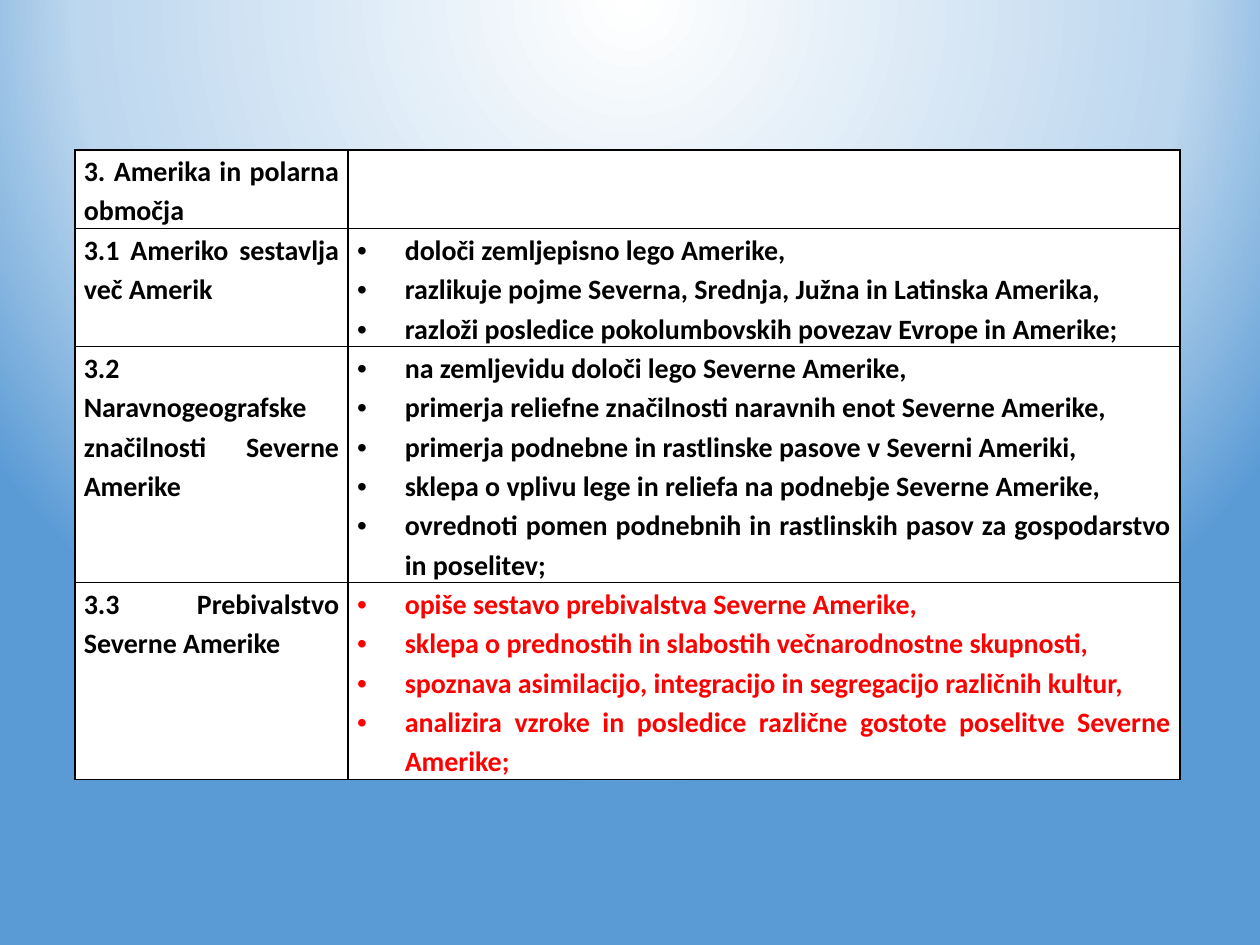
from lxml.etree import SubElement
from pptx import Presentation
from pptx.dml.color import RGBColor
from pptx.enum.text import PP_ALIGN as Align
from pptx.oxml import parse_xml
from pptx.oxml.ns import nsdecls, qn
from pptx.util import Cm, Pt

BLACK, WHITE, RED = "000000", "FFFFFF", "FF0000"
LINE_HEIGHT = 0.79
BACKGROUND_STOPS = [(0, WHITE), (70, "BDD7EE"), (100, "5B9BD5")]

# topic, goals, colour of the goals, number of text lines in the row
TOPICS = [
    ("3. Amerika in polarna območja", [], BLACK, 2),
    ("3.1 Ameriko sestavlja več Amerik", [
        "določi zemljepisno lego Amerike,",
        "razlikuje pojme Severna, Srednja, Južna in Latinska Amerika,",
        "razloži posledice pokolumbovskih povezav Evrope in Amerike;",
    ], BLACK, 3),
    ("3.2 Naravnogeografske značilnosti Severne Amerike", [
        "na zemljevidu določi lego Severne Amerike,",
        "primerja reliefne značilnosti naravnih enot Severne Amerike,",
        "primerja podnebne in rastlinske pasove v Severni Ameriki,",
        "sklepa o vplivu lege in reliefa na podnebje Severne Amerike,",
        "ovrednoti pomen podnebnih in rastlinskih pasov za gospodarstvo in poselitev;",
    ], BLACK, 6),
    ("3.3 Prebivalstvo Severne Amerike", [
        "opiše sestavo prebivalstva Severne Amerike,",
        "sklepa o prednostih in slabostih večnarodnostne skupnosti,",
        "spoznava asimilacijo, integracijo in segregacijo različnih kultur,",
        "analizira vzroke in posledice različne gostote poselitve Severne Amerike;",
    ], RED, 5),
]


def rgb(value):
    return RGBColor.from_string(value)


def set_background(slide, stops):
    """Fill the background with a circular gradient centred above the slide."""
    slide.background.fill.solid()
    solid = slide.element.find(".//" + qn("p:bgPr") + "/" + qn("a:solidFill"))
    stop_xml = "".join(
        f'<a:gs pos="{percent * 1000}"><a:srgbClr val="{color}"/></a:gs>'
        for percent, color in stops)
    gradient = parse_xml(
        f'<a:gradFill {nsdecls("a")} rotWithShape="1"><a:gsLst>{stop_xml}</a:gsLst>'
        '<a:path path="circle">'
        '<a:fillToRect l="50000" t="-80000" r="50000" b="180000"/>'
        '</a:path></a:gradFill>')
    solid.getparent().replace(solid, gradient)


def write_text(frame, lines, *, size=16, color=BLACK, bold=True,
               font="Calibri", bullet=None, indent=0.96):
    for index, line in enumerate(lines):
        paragraph = frame.paragraphs[0] if index == 0 else frame.add_paragraph()
        paragraph.alignment = Align.JUSTIFY
        paragraph.line_spacing = 1.15
        run = paragraph.add_run()
        run.text = line
        run.font.name = font
        run.font.size = Pt(size)
        run.font.bold = bold
        run.font.color.rgb = rgb(color)
        if bullet:
            properties = paragraph._p.get_or_add_pPr()
            properties.set("marL", str(Cm(indent)))
            properties.set("indent", str(-Cm(indent)))
            SubElement(properties, qn("a:buFont"), typeface="Arial")
            SubElement(properties, qn("a:buChar"), char=bullet)


def format_cell(cell, fill=WHITE, border=BLACK, width=1):
    cell.margin_left = cell.margin_right = Cm(0.18)
    cell.margin_top = cell.margin_bottom = 0
    properties = cell._tc.get_or_add_tcPr()
    for side in ("lnL", "lnR", "lnT", "lnB"):
        line = SubElement(properties, qn(f"a:{side}"), w=str(Pt(width)))
        solid = SubElement(line, qn("a:solidFill"))
        SubElement(solid, qn("a:srgbClr"), val=border)
    cell.fill.solid()
    cell.fill.fore_color.rgb = rgb(fill)


def add_topic_table(slide, left, top, column_widths, topics):
    height = LINE_HEIGHT * sum(line_count for *_, line_count in topics)
    table = slide.shapes.add_table(
        len(topics), len(column_widths), Cm(left), Cm(top),
        Cm(sum(column_widths)), Cm(height)).table
    table.first_row = table.horz_banding = False
    for column, width in zip(table.columns, column_widths):
        column.width = Cm(width)
    for row, (topic, goals, color, line_count) in zip(table.rows, topics):
        row.height = Cm(LINE_HEIGHT * line_count)
        topic_cell, goals_cell = row.cells
        format_cell(topic_cell)
        format_cell(goals_cell)
        write_text(topic_cell.text_frame, [topic])
        write_text(goals_cell.text_frame, goals, color=color, bullet="•")


def main():
    presentation = Presentation()
    presentation.slide_width, presentation.slide_height = Cm(25.4), Cm(19.05)
    blank_layout = presentation.slide_layouts[6]
    slide = presentation.slides.add_slide(blank_layout)
    set_background(slide, BACKGROUND_STOPS)
    add_topic_table(slide, 1.51, 3.02, (5.51, 16.77), TOPICS)
    presentation.save("out.pptx")


if __name__ == "__main__":
    main()
